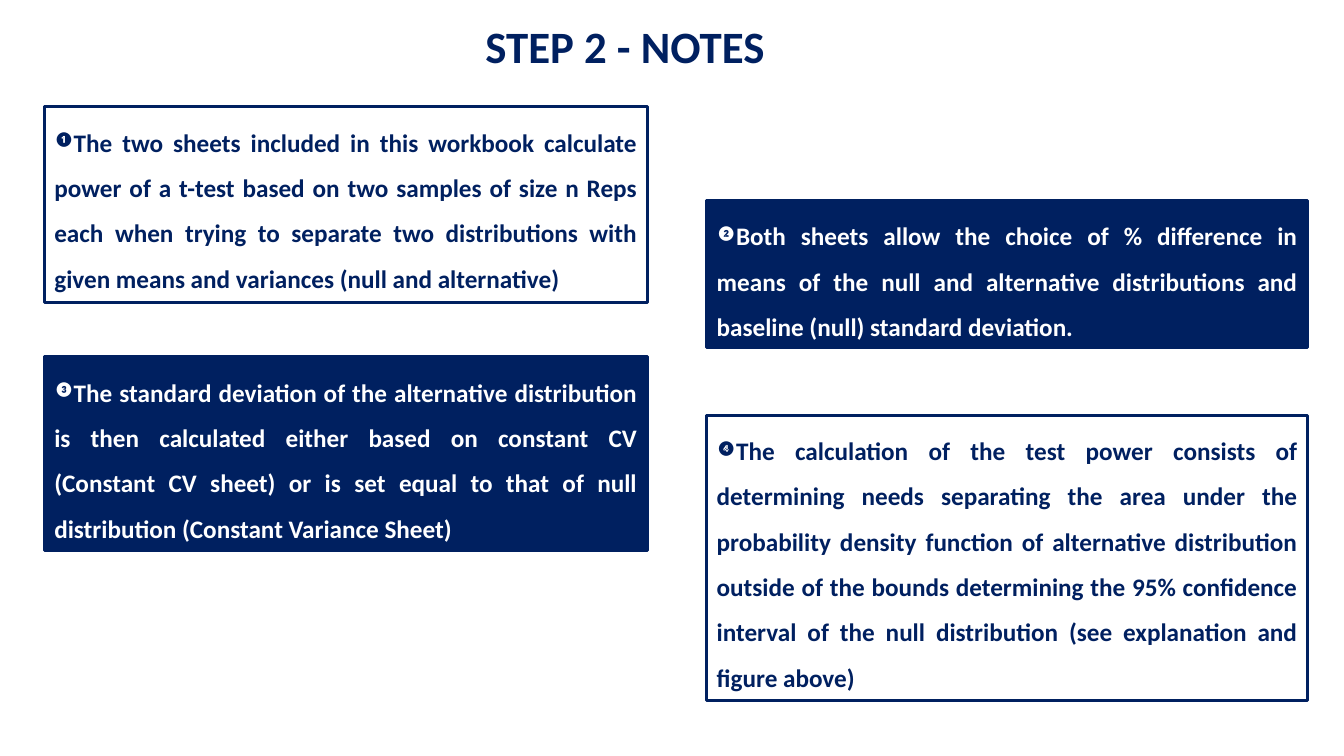
"""Build the "Step 2 - Notes" slide with four numbered notes."""
from dataclasses import dataclass

from pptx import Presentation
from pptx import util as u
from pptx.dml.color import RGBColor
from pptx.enum import shapes, text


@dataclass(frozen=True)
class Theme:
    navy: RGBColor = RGBColor(0x00, 0x20, 0x60)
    white: RGBColor = RGBColor(0xFF, 0xFF, 0xFF)
    font: str = "Calibri"
    heading_size: int = 32
    note_size: int = 18
    border: float = 2.25


THEME = Theme()
LEFT_COLUMN = (0.44, 5.98)
RIGHT_COLUMN = (7.01, 5.96)

NOTES = [
    (LEFT_COLUMN, 1.06, 1.94, False, "❶",
     "The two sheets included in this workbook calculate power of a t-test "
     "based on two samples of size n Reps each when trying to separate two "
     "distributions with given means and variances (null and alternative)"),
    (RIGHT_COLUMN, 1.99, 1.46, True, "❷",
     "Both sheets allow the choice of % difference in means of the null and "
     "alternative distributions and baseline (null) standard deviation."),
    (LEFT_COLUMN, 3.54, 1.92, True, "❸",
     "The standard deviation of the alternative distribution is then "
     "calculated either based on constant CV (Constant CV sheet) or is set "
     "equal to that of null distribution (Constant Variance Sheet)"),
    (RIGHT_COLUMN, 4.12, 2.83, False, "❹",
     "The calculation of the test power consists of determining needs "
     "separating the area under the probability density function of "
     "alternative distribution outside of the bounds determining the 95% "
     "confidence interval of the null distribution (see explanation and "
     "figure above)"),
]


def add_run(paragraph, words, size, color, raised=False):
    run = paragraph.add_run()
    run.text = words
    run.font.name = THEME.font
    run.font.size = u.Pt(size)
    run.font.bold = True
    run.font.color.rgb = color
    if raised:
        run.font._element.set("baseline", "30000")


def add_heading(slide, words):
    heading = slide.shapes.add_textbox(
        u.Inches(3.53), u.Inches(0.14), u.Inches(5.34), u.Inches(0.64))
    heading.text_frame.word_wrap = True
    line = heading.text_frame.paragraphs[0]
    line.alignment = text.PP_ALIGN.CENTER
    add_run(line, words, THEME.heading_size, THEME.navy)


def add_note(slide, column, top, height, filled, number, words):
    left, width = column
    note = slide.shapes.add_shape(
        shapes.MSO_SHAPE.RECTANGLE,
        u.Inches(left), u.Inches(top), u.Inches(width), u.Inches(height))
    note.shadow.inherit = False
    note.line.color.rgb = THEME.navy
    note.line.width = u.Pt(THEME.border)
    if filled:
        note.fill.solid()
        note.fill.fore_color.rgb = THEME.navy
    else:
        note.fill.background()

    frame = note.text_frame
    frame.word_wrap = True
    frame.auto_size = text.MSO_AUTO_SIZE.SHAPE_TO_FIT_TEXT
    frame.vertical_anchor = text.MSO_ANCHOR.TOP
    body = frame.paragraphs[0]
    body.alignment = text.PP_ALIGN.JUSTIFY
    body.line_spacing = 1.5
    ink = THEME.white if filled else THEME.navy
    add_run(body, number, THEME.note_size, ink, raised=True)
    add_run(body, words, THEME.note_size, ink)


def main():
    deck = Presentation()
    deck.slide_width = u.Inches(13.33)
    deck.slide_height = u.Inches(7.5)
    slide = deck.slides.add_slide(deck.slide_layouts[6])
    for note in NOTES:
        add_note(slide, *note)
    add_heading(slide, "STEP 2 - NOTES")
    deck.save("out.pptx")


if __name__ == "__main__":
    main()
